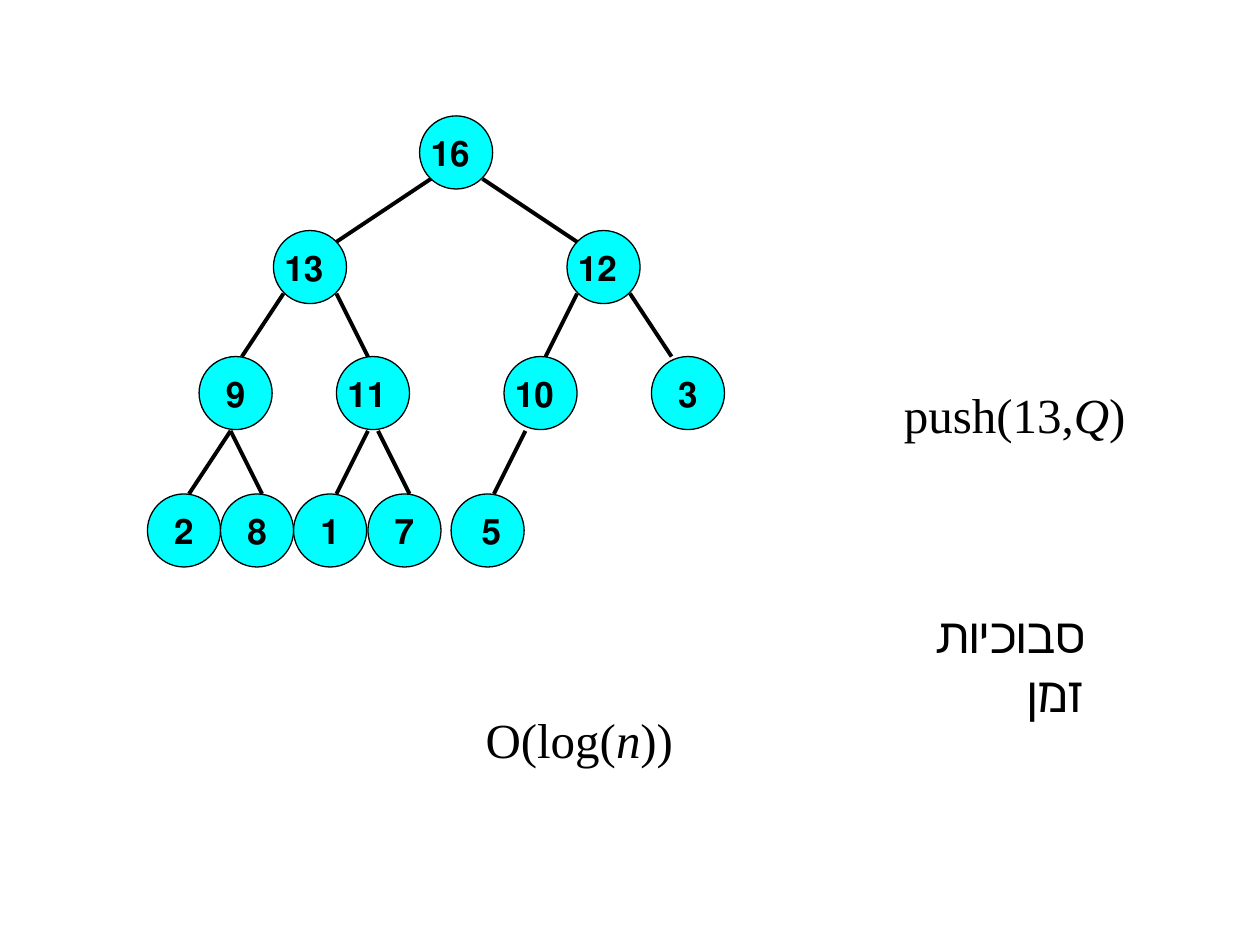
from lxml import etree
from pptx import Presentation
from pptx import util as u
from pptx.dml.color import RGBColor
from pptx.enum import shapes, text
from pptx.oxml import ns

BLACK = RGBColor(0, 0, 0)
CYAN = RGBColor(0, 255, 255)
DIAMETER = 0.58


def write_text(shape, *pieces, font, size, bold=False, align=text.PP_ALIGN.RIGHT, wrap=False):
    frame = shape.text_frame
    frame.word_wrap = wrap
    para = frame.paragraphs[0]
    para.alignment = align
    para._p.get_or_add_pPr().set("rtl", "1")
    for words, italic in pieces:
        span = para.add_run()
        span.text = words
        span.font.name = font
        span.font.size = u.Pt(size)
        span.font.bold = bold
        span.font.italic = italic
        span.font.color.rgb = BLACK


deck = Presentation()
deck.slide_width = u.Inches(10)
deck.slide_height = u.Inches(7.5)
page = deck.slides.add_slide(deck.slide_layouts[6])

heap_levels = [
    (0.92, [("16", 3.33)]),
    (1.83, [("13", 2.17), ("12", 4.5)]),
    (2.83, [("9", 1.58), ("11", 2.67), ("10", 4), ("3", 5.17)]),
    (3.92, [("2", 1.17), ("8", 1.75), ("1", 2.33), ("7", 2.92), ("5", 3.58)]),
]
for top, nodes in heap_levels:
    for label, left in nodes:
        node = page.shapes.add_shape(
            shapes.MSO_SHAPE.OVAL,
            u.Inches(left), u.Inches(top), u.Inches(DIAMETER), u.Inches(DIAMETER))
        node.shadow.inherit = False
        node.fill.solid()
        node.fill.fore_color.rgb = CYAN
        node.line.color.rgb = BLACK
        node.line.width = u.Pt(0.75)
        node.text_frame.vertical_anchor = text.MSO_ANCHOR.MIDDLE
        centred = len(label) == 1 and label != "5"
        write_text(node, (label, False), font="Calibri", size=20, bold=True,
                   align=text.PP_ALIGN.CENTER if centred else text.PP_ALIGN.RIGHT)

edge_levels = [
    (1.42, 1.92, [(3.42, 2.67), (3.83, 4.58)]),
    (2.33, 2.83, [(2.25, 1.92), (2.67, 2.92), (4.58, 4.33), (5, 5.33)]),
    (3.42, 3.92, [(1.83, 1.5), (1.83, 2.08), (2.92, 2.67), (3, 3.25), (4.17, 3.92)]),
]
for top, bottom, edges in edge_levels:
    for parent_x, child_x in edges:
        edge = page.shapes.add_connector(
            shapes.MSO_CONNECTOR.STRAIGHT,
            u.Inches(parent_x), u.Inches(top), u.Inches(child_x), u.Inches(bottom))
        edge.line.color.rgb = BLACK
        edge.line.width = u.Pt(2.25)
        etree.SubElement(edge._element.spPr, ns.qn("a:effectLst"))

captions = [
    (3.75, 5.58, 1.69, False, [("O(log(", False), ("n", True), ("))", False)]),
    (7.33, 4.75, 1.38, True, [("סבוכיות זמן", False)]),
    (7.05, 3, 1.98, False, [("push(13,", False), ("Q", True), (")", False)]),
]
for left, top, width, wrap, pieces in captions:
    box = page.shapes.add_textbox(u.Inches(left), u.Inches(top), u.Inches(width), u.Inches(0.57))
    box.text_frame.auto_size = text.MSO_AUTO_SIZE.SHAPE_TO_FIT_TEXT
    box.text_frame.margin_left = u.Inches(0.05 if wrap else 0.1)
    write_text(box, *pieces, font="Times New Roman", size=28, wrap=wrap)

deck.save("out.pptx")
